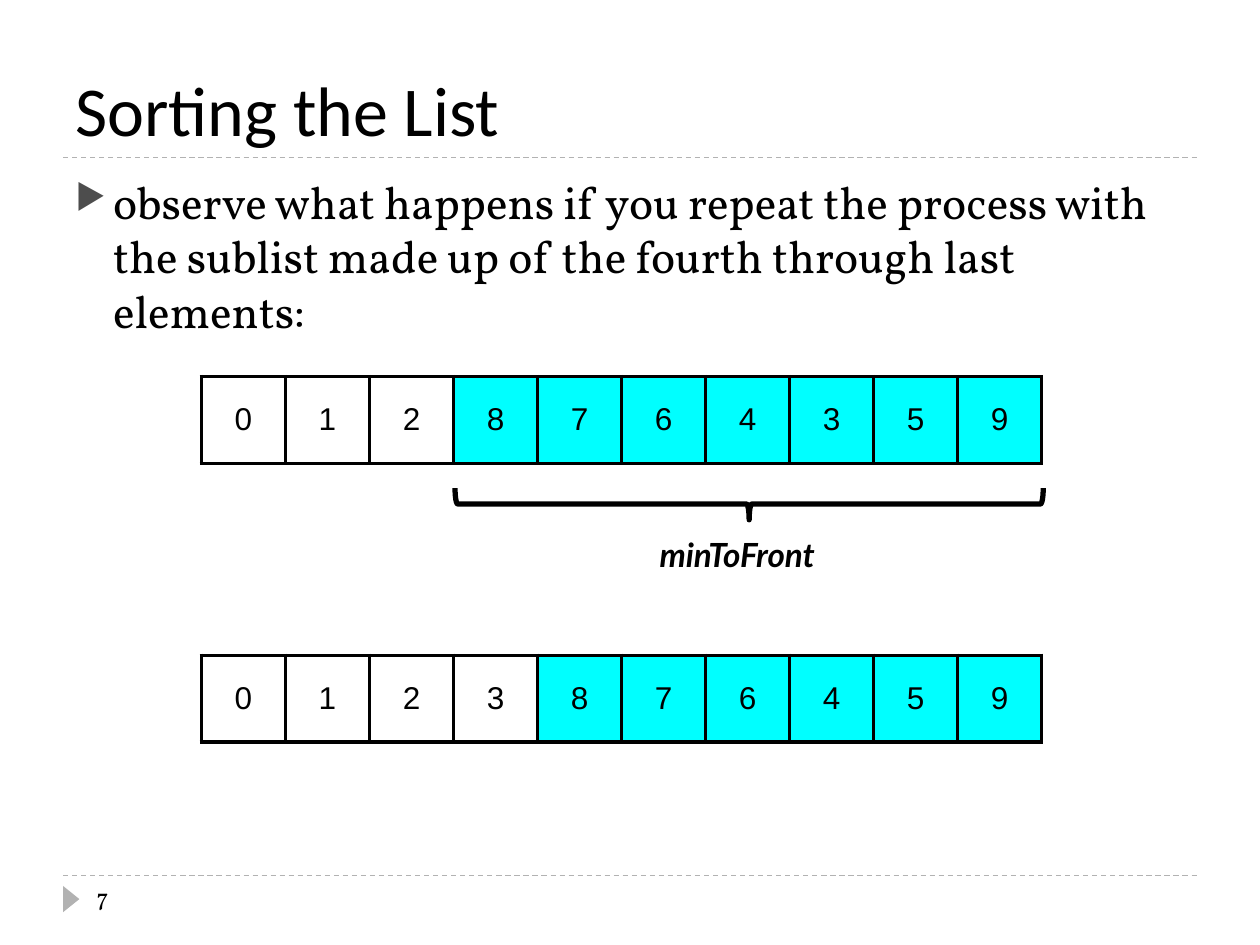
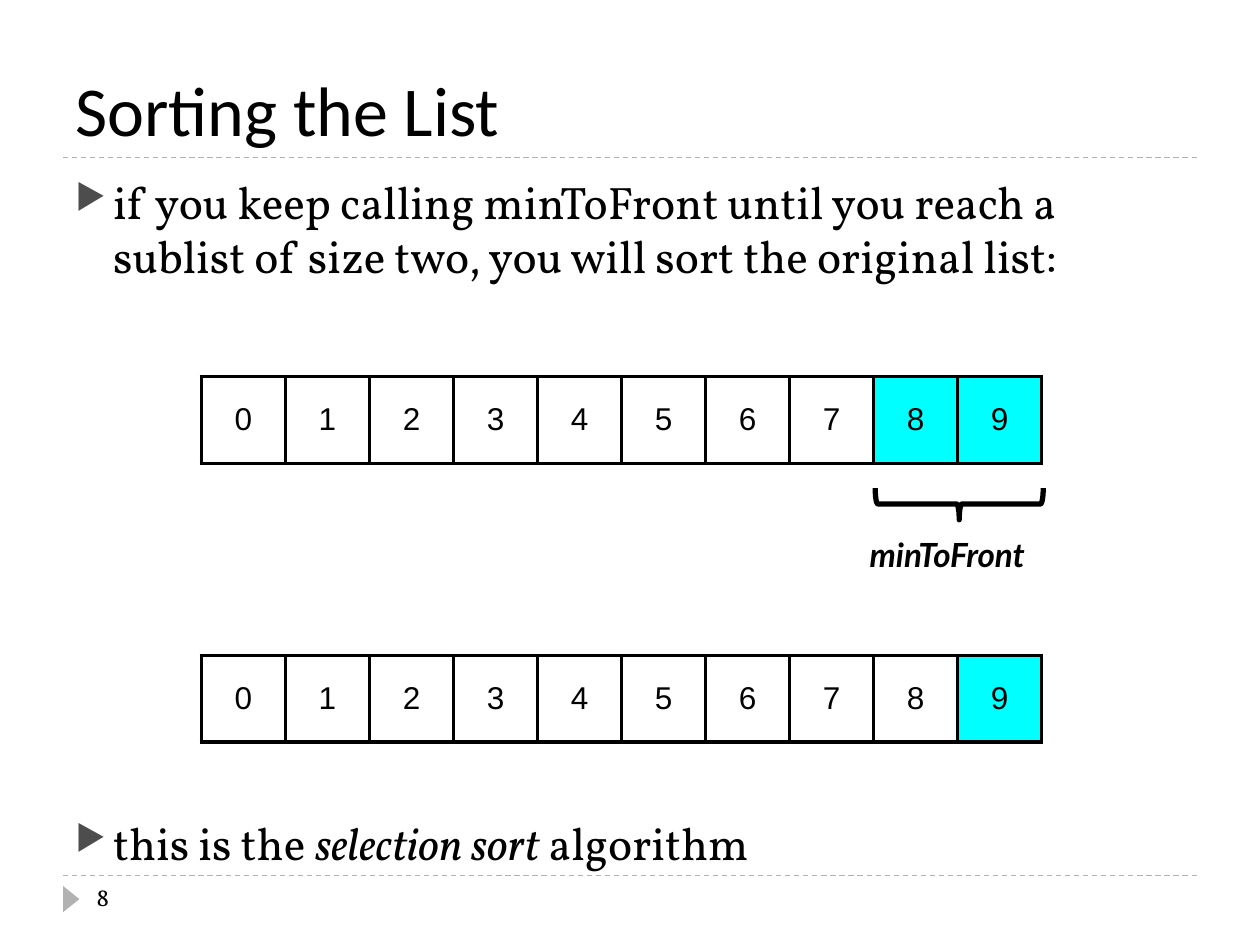
"""Build two slides that show selection sort moving the minimum to the front."""
from lxml.etree import SubElement
from pptx import Presentation
from pptx.dml.color import RGBColor
from pptx.enum.dml import MSO_LINE
from pptx.enum.shapes import MSO_CONNECTOR, MSO_SHAPE
from pptx.enum.text import MSO_ANCHOR, MSO_AUTO_SIZE, PP_ALIGN
from pptx.oxml.ns import qn
from pptx.util import Cm, Pt

COLOURS = {
    "ink": "000000",
    "rule": "B2B2B2",
    "bullet": "4D4D4D",
    "sorted": "FFFFFF",
    "unsorted": "00FFFF",
}
LIST_LEFT, LIST_WIDTH, CELL_HEIGHT = 4.06, 16.94, 1.75
BEFORE_TOP, AFTER_TOP = 7.59, 13.21
BRACE_MIDDLE, BRACE_DEPTH = 10.16, 0.64
LABEL_WIDTH = 4.11

SORTING_STEPS = [
    {
        "page": "7",
        "points": [
            (6, [("observe what happens if you repeat the process with the sublist "
                  "made up of the fourth through last elements:", False)]),
        ],
        "before": ("0128764359", 3),
        "after": ("0123876459", 4),
    },
    {
        "page": "8",
        "points": [
            (6, [("if you keep calling minToFront until you reach a sublist of size "
                  "two, you will sort the original list:", False)]),
            (304, [("this is the ", False), ("selection sort", True),
                   (" algorithm", False)]),
        ],
        "before": ("0123456789", 8),
        "after": ("0123456789", 9),
    },
]


def colour(name):
    return RGBColor.from_string(COLOURS[name])


def style_font(paragraph, family, size):
    paragraph.font.name = family
    paragraph.font.size = Pt(size)
    paragraph.font.color.rgb = colour("ink")


def add_title(slide, text):
    title = slide.shapes.title
    title.left, title.top, title.width, title.height = Cm(1.27), Cm(0.43), Cm(22.86), Cm(2.74)
    frame = title.text_frame
    frame.text = text
    frame.auto_size = MSO_AUTO_SIZE.NONE
    frame.vertical_anchor = MSO_ANCHOR.BOTTOM
    frame.paragraphs[0].alignment = PP_ALIGN.LEFT
    style_font(frame.paragraphs[0], "Calibri", 40)


def add_dashed_rule(slide, y):
    rule = slide.shapes.add_connector(MSO_CONNECTOR.STRAIGHT, Cm(1.27), Cm(y), Cm(24.13), Cm(y))
    rule.line.color.rgb = colour("rule")
    rule.line.width = Pt(0.75)
    rule.line.dash_style = MSO_LINE.DASH
    SubElement(rule._element.spPr, qn("a:effectLst"))


def add_text_box(slide, left, top, width, height, wrap=True):
    box = slide.shapes.add_textbox(Cm(left), Cm(top), Cm(width), Cm(height))
    box.text_frame.word_wrap = wrap
    return box.text_frame


def add_page_marker(slide, page):
    marker = slide.shapes.add_shape(
        MSO_SHAPE.ISOSCELES_TRIANGLE, Cm(1.17), Cm(17.96), Cm(0.53), Cm(0.33))
    marker.rotation = 90
    marker.shadow.inherit = False
    marker.fill.solid()
    marker.fill.fore_color.rgb = colour("rule")
    marker.line.fill.background()
    frame = add_text_box(slide, 1.7, 17.65, 5.51, 1.02)
    frame.text = page
    style_font(frame.paragraphs[0], "Vollkorn", 14)


def add_bullet(paragraph):
    properties = paragraph._p.get_or_add_pPr()
    properties.set("marL", str(Cm(0.76)))
    properties.set("indent", str(-Cm(0.76)))
    bullet_colour = SubElement(properties, qn("a:buClr"))
    SubElement(bullet_colour, qn("a:srgbClr"), val=COLOURS["bullet"])
    SubElement(properties, qn("a:buSzPct"), val="76000")
    SubElement(properties, qn("a:buChar"), char="▶")


def add_points(slide, points):
    frame = add_text_box(slide, 1.27, 3.38, 22.86, 13.72)
    for index, (space_before, runs) in enumerate(points):
        paragraph = frame.add_paragraph() if index else frame.paragraphs[0]
        paragraph.space_before = Pt(space_before)
        add_bullet(paragraph)
        style_font(paragraph, "Vollkorn", 26)
        for text, italic in runs:
            run = paragraph.add_run()
            run.text = text
            run.font.italic = italic


def add_cell_borders(cell):
    properties = cell._tc.get_or_add_tcPr()
    for side in ("lnL", "lnR", "lnT", "lnB"):
        border = SubElement(properties, qn(f"a:{side}"), w=str(Pt(2.25)))
        fill = SubElement(border, qn("a:solidFill"))
        SubElement(fill, qn("a:srgbClr"), val=COLOURS["ink"])


def add_number_list(slide, top, digits, sorted_count):
    table = slide.shapes.add_table(
        1, len(digits), Cm(LIST_LEFT), Cm(top), Cm(LIST_WIDTH), Cm(CELL_HEIGHT)).table
    table.first_row = table.horz_banding = False
    for index, digit in enumerate(digits):
        cell = table.cell(0, index)
        cell.text = digit
        cell.vertical_anchor = MSO_ANCHOR.MIDDLE
        cell.text_frame.paragraphs[0].alignment = PP_ALIGN.CENTER
        style_font(cell.text_frame.paragraphs[0], "Arial", 18)
        add_cell_borders(cell)
        cell.fill.solid()
        cell.fill.fore_color.rgb = colour("sorted" if index < sorted_count else "unsorted")


def add_sublist_brace(slide, digits, sorted_count):
    span = LIST_WIDTH * (len(digits) - sorted_count) / len(digits)
    centre = LIST_LEFT + LIST_WIDTH - span / 2 + 0.03
    brace = slide.shapes.add_shape(
        MSO_SHAPE.RIGHT_BRACE, Cm(centre - BRACE_DEPTH / 2), Cm(BRACE_MIDDLE - span / 2),
        Cm(BRACE_DEPTH), Cm(span))
    brace.rotation = 90
    brace.shadow.inherit = False
    brace.fill.background()
    brace.line.color.rgb = colour("ink")
    brace.line.width = Pt(3)

    frame = add_text_box(slide, centre - LABEL_WIDTH / 2, 10.64, LABEL_WIDTH, 1.07, wrap=False)
    frame.auto_size = MSO_AUTO_SIZE.SHAPE_TO_FIT_TEXT
    frame.text = "minToFront"
    label = frame.paragraphs[0]
    style_font(label, "Lato", 19)
    label.font.bold = label.font.italic = True


def add_sorting_slide(deck, step):
    slide = deck.slides.add_slide(deck.slide_layouts.get_by_name("Title Only"))
    for y in (17.65, 3.18):
        add_dashed_rule(slide, y)
    add_title(slide, "Sorting the List")
    add_points(slide, step["points"])
    add_page_marker(slide, step["page"])
    add_sublist_brace(slide, *step["before"])
    add_number_list(slide, AFTER_TOP, *step["after"])
    add_number_list(slide, BEFORE_TOP, *step["before"])


def main():
    deck = Presentation()
    deck.slide_width, deck.slide_height = Cm(25.4), Cm(19.05)
    for step in SORTING_STEPS:
        add_sorting_slide(deck, step)
    deck.save("out.pptx")


if __name__ == "__main__":
    main()
